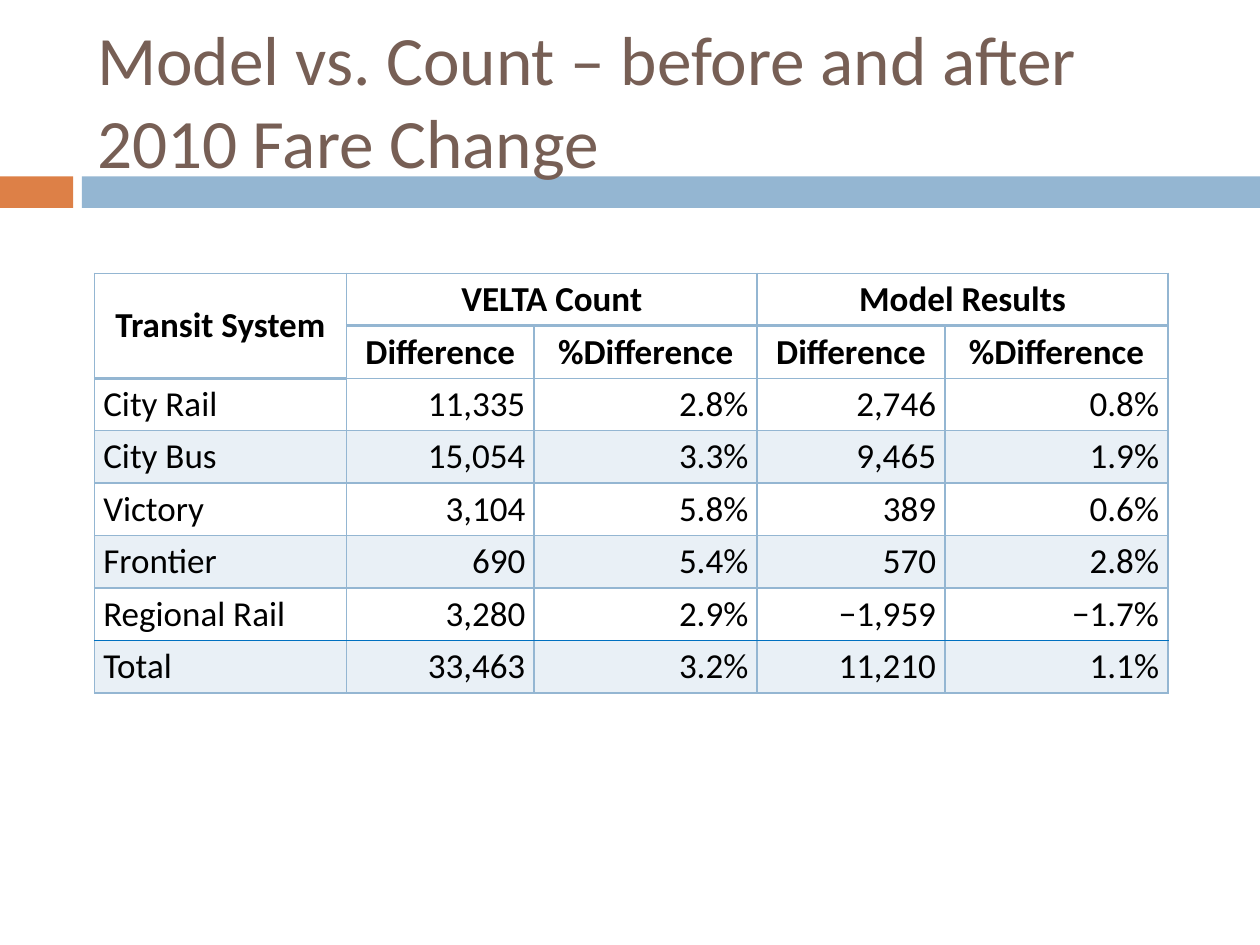
from dataclasses import dataclass

from lxml import etree
from pptx import Presentation
from pptx.dml.color import RGBColor
from pptx.enum.shapes import MSO_SHAPE
from pptx.enum.text import MSO_ANCHOR, MSO_AUTO_SIZE, PP_ALIGN
from pptx.oxml.ns import qn
from pptx.util import Inches, Pt

RECT = MSO_SHAPE.RECTANGLE
MIDDLE = MSO_ANCHOR.MIDDLE
LEFT, CENTER, RIGHT = PP_ALIGN.LEFT, PP_ALIGN.CENTER, PP_ALIGN.RIGHT


@dataclass(frozen=True)
class Theme:
    font: str = "Calibri"
    title: str = "775F55"
    text: str = "000000"
    blue: str = "94B6D2"
    orange: str = "DD8047"
    total_rule: str = "0070C0"
    band_opacity: int = 20
    title_size: float = 39.6
    table_size: float = 20


THEME = Theme()

# Content
TITLE = "Model vs. Count – before and after 2010 Fare Change"
HEADERS = [
    ("Transit System", "VELTA Count", "", "Model Results", ""),
    ("", "Difference", "%Difference", "Difference", "%Difference"),
]
BODY = [
    ("City Rail", "11,335", "2.8%", "2,746", "0.8%"),
    ("City Bus", "15,054", "3.3%", "9,465", "1.9%"),
    ("Victory", "3,104", "5.8%", "389", "0.6%"),
    ("Frontier", "690", "5.4%", "570", "2.8%"),
    ("Regional Rail", "3,280", "2.9%", "−1,959", "−1.7%"),
    ("Total", "33,463", "3.2%", "11,210", "1.1%"),
]
ROWS = HEADERS + BODY
MERGES = [((0, 0), (1, 0)), ((0, 1), (0, 2)), ((0, 3), (0, 4))]

# Layout in inches
SLIDE_W, SLIDE_H = 10, 7.5
TITLE_BOX = (0.67, 0.25, 8.92, 1.08)
BAR_TOP, BAR_H, ACCENT_W, BAR_LEFT = 1.4, 0.25, 0.58, 0.65
TABLE_LEFT, TABLE_TOP, TABLE_H = 0.75, 2.17, 3.33
COL_WIDTHS = [2, 1.49, 1.77, 1.49, 1.77]
CELL_INSET = 0.07


def inches(*values):
    return [Inches(v) for v in values]


def style_runs(p, size, color, bold=False):
    for r in p.runs:
        r.font.name = THEME.font
        r.font.size = Pt(size)
        r.font.bold = bold
        r.font.color.rgb = RGBColor.from_string(color)


def add_bar(slide, left, width, color):
    sp = slide.shapes.add_shape(RECT, *inches(left, BAR_TOP, width, BAR_H))
    sp.shadow.inherit = False
    sp.fill.solid()
    sp.fill.fore_color.rgb = RGBColor.from_string(color)
    sp.line.fill.background()


def set_borders(cell, row):
    """Draw the grid, heavier below the group heads and blue above the total."""
    rules = {1: (THEME.blue, 2), len(ROWS) - 1: (THEME.total_rule, 1)}
    plain = (THEME.blue, 1)
    bottom = rules.get(row + 1, plain)
    if cell.is_merge_origin:
        bottom = (THEME.blue, 2)
    edges = {"L": plain, "R": plain, "T": rules.get(row, plain), "B": bottom}
    tc_pr = cell._tc.get_or_add_tcPr()
    for side, (color, width) in edges.items():
        ln = etree.SubElement(tc_pr, qn(f"a:ln{side}"), w=str(Pt(width)))
        fill = etree.SubElement(ln, qn("a:solidFill"))
        etree.SubElement(fill, qn("a:srgbClr"), val=color)


def set_fill(cell, banded):
    if not banded:
        cell.fill.background()
        return
    cell.fill.solid()
    cell.fill.fore_color.rgb = RGBColor.from_string(THEME.blue)
    color = cell._tc.tcPr.find(qn("a:solidFill"))[0]
    etree.SubElement(color, qn("a:alpha"), val=str(THEME.band_opacity * 1000))


def add_table(slide):
    box = inches(TABLE_LEFT, TABLE_TOP, sum(COL_WIDTHS), TABLE_H)
    table = slide.shapes.add_table(len(ROWS), len(COL_WIDTHS), *box).table
    table.first_row = table.horz_banding = False
    for column, width in zip(table.columns, COL_WIDTHS):
        column.width = Inches(width)
    for start, end in MERGES:
        table.cell(*start).merge(table.cell(*end))

    for i, row in enumerate(ROWS):
        header = i < len(HEADERS)
        for j, text in enumerate(row):
            cell = table.cell(i, j)
            cell.margin_left = cell.margin_right = Inches(CELL_INSET)
            cell.margin_top = cell.margin_bottom = 0
            cell.vertical_anchor = MIDDLE
            set_borders(cell, i)
            set_fill(cell, not header and i % 2 == 1)
            if text:
                p = cell.text_frame.paragraphs[0]
                p.text = text
                p.alignment = CENTER if header else RIGHT if j else LEFT
                style_runs(p, THEME.table_size, THEME.text, header)


def add_title(slide):
    title = slide.shapes.title
    title.left, title.top, title.width, title.height = inches(*TITLE_BOX)
    tf = title.text_frame
    tf.text = TITLE
    tf.word_wrap = True
    tf.auto_size = MSO_AUTO_SIZE.NONE
    tf.vertical_anchor = MIDDLE
    p = tf.paragraphs[0]
    p.alignment = LEFT
    style_runs(p, THEME.title_size, THEME.title)


def main():
    prs = Presentation()
    prs.slide_width, prs.slide_height = inches(SLIDE_W, SLIDE_H)
    slide = prs.slides.add_slide(prs.slide_layouts[5])

    # Bars first, with the title in front of them
    add_bar(slide, 0, ACCENT_W, THEME.orange)
    add_bar(slide, BAR_LEFT, SLIDE_W - BAR_LEFT, THEME.blue)
    add_title(slide)
    slide.shapes._spTree.append(slide.shapes.title._element)

    add_table(slide)
    prs.save("out.pptx")


if __name__ == "__main__":
    main()
